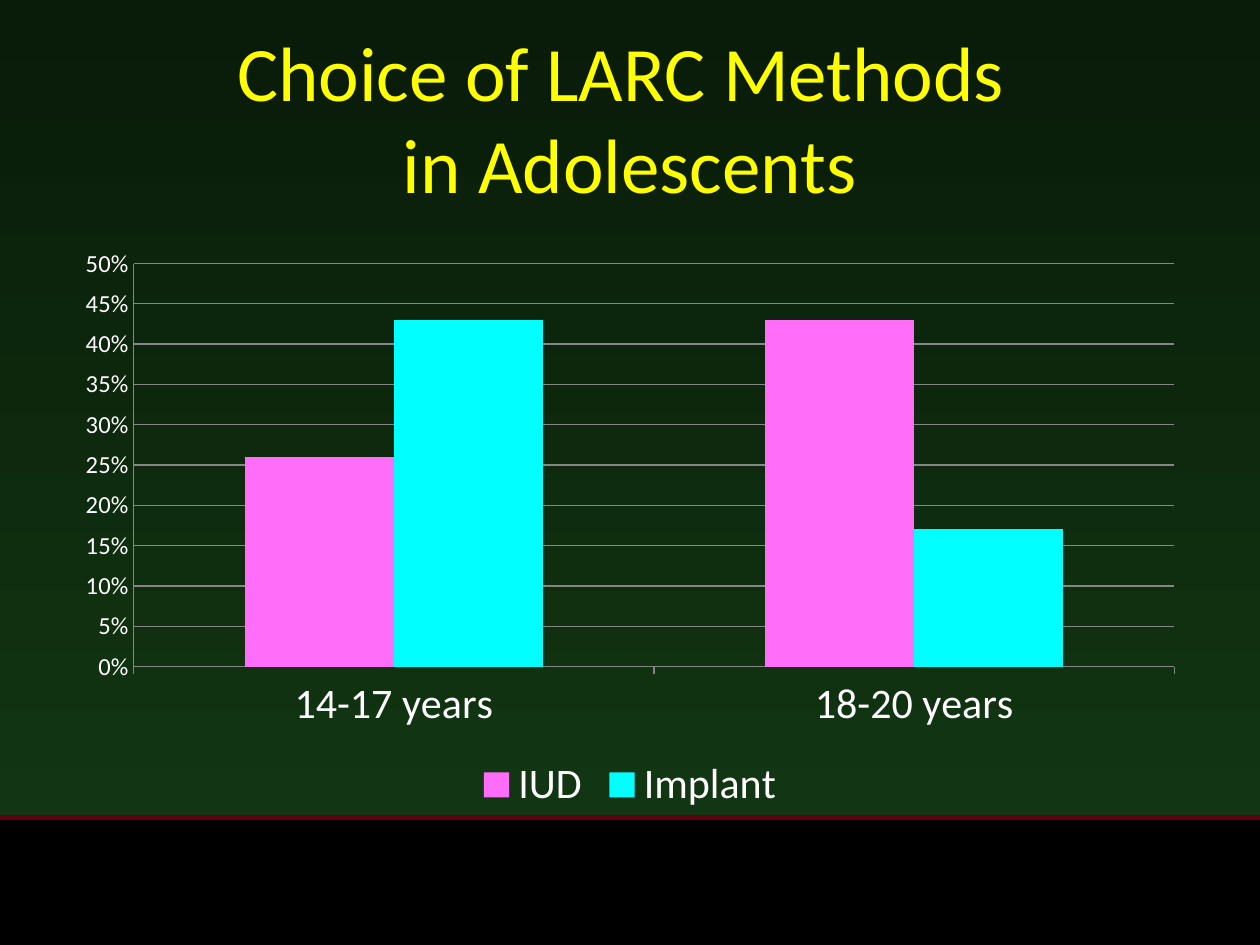
"""Build a slide comparing LARC method choice between two adolescent age groups."""
from dataclasses import dataclass

from lxml import etree
from pptx import Presentation
from pptx import util as u
from pptx.chart.data import CategoryChartData
from pptx.dml.color import RGBColor
from pptx.enum import chart as ch
from pptx.enum import shapes, text
from pptx.oxml.ns import qn

COLORS = {
    "top": "091B09", "bottom": "133A14", "band": "000000", "rule": "5F000F",
    "title": "FFFF00", "label": "FFFFFF", "axis": "868686",
    "iud": "FF6DF9", "implant": "00FFFF",
}
FONT = "Calibri"
AGES = ["14-17 years", "18-20 years"]


@dataclass
class Method:
    name: str
    shares: list[float]
    color: str


METHODS = [
    Method("IUD", [0.26, 0.43], "iud"),
    Method("Implant", [0.43, 0.17], "implant"),
]


def rgb(name: str) -> RGBColor:
    return RGBColor.from_string(COLORS[name])


def style_font(font, size: float, color: str) -> None:
    font.name, font.size, font.bold = FONT, u.Pt(size), False
    font.color.rgb = rgb(color)


def write(frame, words: str, *, size: float, color: str, align, anchor) -> None:
    frame.word_wrap = True
    frame.auto_size = text.MSO_AUTO_SIZE.NONE
    frame.vertical_anchor = anchor
    frame.text = words
    for para in frame.paragraphs:
        para.alignment = align
        for span in para.runs:
            style_font(span.font, size, color)


def place(item, left: float, top: float, width: float, height: float) -> None:
    item.left, item.top = u.Inches(left), u.Inches(top)
    item.width, item.height = u.Inches(width), u.Inches(height)


def draw_backdrop(page) -> None:
    fill = page.background.fill
    fill.gradient()
    fill.gradient_angle = 270
    for stop, color in zip(fill.gradient_stops, ("top", "bottom")):
        stop.color.rgb = rgb(color)
        stop.position = 0 if color == "top" else 1
    band = page.shapes.add_shape(
        shapes.MSO_SHAPE.RECTANGLE, 0, u.Inches(6.5), u.Inches(10), u.Inches(1))
    band.shadow.inherit = False
    band.fill.solid()
    band.fill.fore_color.rgb = rgb("band")
    band.line.fill.background()
    rule = page.shapes.add_connector(
        shapes.MSO_CONNECTOR.STRAIGHT, 0, u.Inches(6.49), u.Inches(10), u.Inches(6.49))
    rule.line.color.rgb = rgb("rule")
    rule.line.width = u.Pt(3)
    etree.SubElement(rule.element.spPr, qn("a:effectLst"))


def style_axis(axis, size: float, tick) -> None:
    style_font(axis.tick_labels.font, size, "label")
    axis.major_tick_mark = tick
    axis.minor_tick_mark = ch.XL_TICK_MARK.NONE
    axis.format.line.color.rgb = rgb("axis")
    axis.format.line.width = u.Pt(0.75)


def draw_chart(page, methods: list[Method]) -> None:
    data = CategoryChartData(number_format="0%")
    data.categories = AGES
    for method in methods:
        data.add_series(method.name, method.shares)
    frame = page.shapes.add_chart(
        ch.XL_CHART_TYPE.COLUMN_CLUSTERED, u.Inches(0.5), u.Inches(1.88),
        u.Inches(9), u.Inches(4.62), data)
    chart = frame.chart
    style_font(chart.font, 10, "bottom")
    chart.has_title = False
    chart.has_legend = True
    chart.legend.position = ch.XL_LEGEND_POSITION.BOTTOM
    chart.legend.include_in_layout = False
    style_font(chart.legend.font, 24, "label")

    style_axis(chart.category_axis, 24, ch.XL_TICK_MARK.OUTSIDE)
    values = chart.value_axis
    style_axis(values, 14, ch.XL_TICK_MARK.NONE)
    values.minimum_scale, values.maximum_scale, values.major_unit = 0, 0.5, 0.05
    values.tick_labels.number_format = "0%"
    values.tick_labels.number_format_is_linked = False
    values.has_major_gridlines = True
    grid = values.major_gridlines.format.line
    grid.color.rgb = rgb("axis")
    grid.width = u.Pt(0.75)

    plot = chart.plots[0]
    plot.gap_width, plot.overlap, plot.vary_by_categories = 150, 0, False
    for series, method in zip(plot.series, methods):
        series.format.fill.solid()
        series.format.fill.fore_color.rgb = rgb(method.color)


def main() -> None:
    deck = Presentation()
    deck.slide_width, deck.slide_height = u.Inches(10), u.Inches(7.5)
    page = deck.slides.add_slide(deck.slide_layouts[5])
    draw_backdrop(page)
    title = page.shapes.title
    place(title, 0.5, 0.3, 9, 1.25)
    write(title.text_frame, "Choice of LARC Methods \vin Adolescents", size=44,
          color="title", align=text.PP_ALIGN.CENTER, anchor=text.MSO_ANCHOR.MIDDLE)
    draw_chart(page, METHODS)
    deck.save("out.pptx")


if __name__ == "__main__":
    main()
